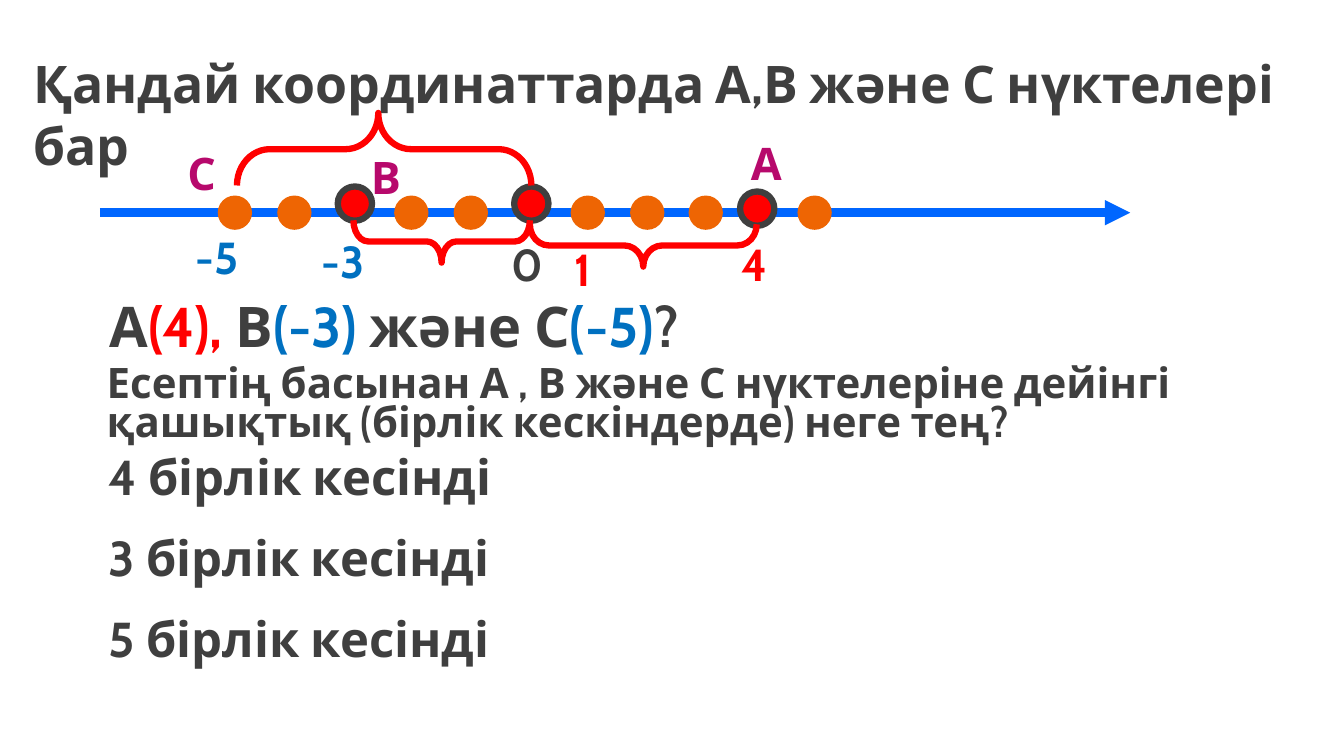
from dataclasses import dataclass

from pptx import Presentation
from pptx.dml.color import RGBColor
from pptx.enum.shapes import MSO_CONNECTOR, MSO_SHAPE
from pptx.enum.text import MSO_ANCHOR, MSO_AUTO_SIZE, PP_ALIGN
from pptx.oxml.ns import qn
from pptx.oxml.xmlchemy import OxmlElement as Element
from pptx.util import Inches, Pt


@dataclass(frozen=True)
class Theme:
    font: str = "Cabin"
    ink: str = "3F3F3F"
    red: str = "FF0000"
    blue: str = "0070C0"
    axis: str = "0066FF"
    dot: str = "EE6503"
    letter: str = "B7096C"
    title: int = 37
    coords: int = 40
    answer: int = 35
    label: int = 32
    question: int = 30
    outline: float = 4.5
    axis_width: float = 6


class NumberLineSlide:
    """Places elements on a grid of 0.1 inch columns and rows."""

    def __init__(self, prs, theme):
        self.t = theme
        self.s = prs.slides.add_slide(prs.slide_layouts[1])

    def grid(self, *cells):
        return [Inches(c / 10) for c in cells]

    def rgb(self, color):
        return RGBColor.from_string(color)

    def style(self, r, size, color):
        r.font.name, r.font.size, r.font.bold = self.t.font, Pt(size), True
        r.font.color.rgb = self.rgb(color)

    def frame(self, sp):
        tf = sp.text_frame
        tf.word_wrap = True
        tf.auto_size = MSO_AUTO_SIZE.SHAPE_TO_FIT_TEXT
        tf.vertical_anchor = MSO_ANCHOR.TOP
        return tf

    def placeholder(self, sp, box, text, size, gap=0):
        sp.left, sp.top, sp.width, sp.height = self.grid(*box)
        tf = self.frame(sp)
        tf.text = text
        for i, p in enumerate(tf.paragraphs):
            pPr = p._p.get_or_add_pPr()
            pPr.set("marL", "0")
            pPr.set("indent", "0")
            pPr.append(Element("a:buNone"))
            p.alignment = PP_ALIGN.LEFT
            p.space_before = Pt(gap if i else 0)
            self.style(p.runs[0], size, self.t.ink)

    def title(self, box, text):
        self.placeholder(self.s.shapes.title, box, text, self.t.title)

    def answers(self, box, lines):
        self.placeholder(self.s.placeholders[1], box, "\n".join(lines),
                         self.t.answer, gap=16)

    def text(self, box, parts, size, leading=None):
        p = self.frame(self.s.shapes.add_textbox(*self.grid(*box))).paragraphs[0]
        if leading:
            p.line_spacing = Pt(leading)
        for words, color in parts:
            r = p.add_run()
            r.text = words
            self.style(r, size, color)

    def label(self, x, y, words, color, width=6.7):
        self.text((x, y, width, 6.3), [(words, color)], self.t.label)

    def axis(self, x1, x2, y):
        line = self.s.shapes.add_connector(MSO_CONNECTOR.STRAIGHT,
                                           *self.grid(x1, y, x2, y))
        line.line.width = Pt(self.t.axis_width)
        line.line.color.rgb = self.rgb(self.t.axis)
        spPr = line._element.spPr
        head = Element("a:tailEnd")
        head.set("type", "triangle")
        spPr.find(qn("a:ln")).append(head)
        spPr.append(Element("a:effectLst"))

    def point(self, x, y, marked=False, size=3.4):
        sp = self.s.shapes.add_shape(
            MSO_SHAPE.OVAL, *self.grid(x - size / 2, y - size / 2, size, size))
        sp.shadow.inherit = False
        sp.fill.solid()
        sp.fill.fore_color.rgb = self.rgb(self.t.red if marked else self.t.dot)
        if marked:
            sp.line.width = Pt(self.t.outline)
            sp.line.color.rgb = self.rgb(self.t.ink)
        else:
            sp.line.fill.background()

    def brace(self, x1, x2, top, depth, rotation, curve, tip=0.5):
        span = x2 - x1
        # The upright brace turns about its centre to lie along the axis
        sp = self.s.shapes.add_shape(MSO_SHAPE.LEFT_BRACE, *self.grid(
            (x1 + x2 - depth) / 2, top + (depth - span) / 2, depth, span))
        sp.rotation = rotation
        sp.adjustments[0], sp.adjustments[1] = curve, tip
        sp.shadow.inherit = False
        sp.fill.background()
        sp.line.width = Pt(self.t.outline)
        sp.line.color.rgb = self.rgb(self.t.red)


def main():
    prs = Presentation()
    prs.slide_width, prs.slide_height = Inches(13.33), Inches(7.5)
    t = Theme()
    slide = NumberLineSlide(prs, t)

    # Heading and answers
    slide.title((2.3, 4.6, 129.4, 13.5),
                "Қандай координаттарда А,В және С нүктелері бар")
    slide.answers((9.8, 43.8, 70.3, 24.6),
                  [f"{n} бірлік кесінді" for n in (4, 3, 5)])

    # Number line with points from -5 to 5
    axis_y = 21.1
    slide.axis(9.9, 112.1, axis_y)
    columns = (23.3, 29.2, 35.2, 40.8, 46.7, 52.7, 58.3, 64.2, 70, 75.1, 80.8)
    marked = {-3: 20.2, 0: 20.2, 4: 20.7}
    for n, x in enumerate(columns, start=-5):
        slide.point(x, marked.get(n, axis_y), n in marked)

    # Point names and coordinates
    for x, y, words, color in ((73.5, 13, "А", t.letter),
                               (35.8, 14.4, "В", t.letter),
                               (17.6, 14, "С", t.letter),
                               (49.8, 23, "0", t.ink),
                               (56, 23.5, "1", t.red),
                               (72.6, 23, "4", t.red)):
        slide.label(x, y, words, color)
    for x, y, words in ((30.9, 22.7, "-3"), (18.4, 22.3, "-5")):
        slide.label(x, y, words, t.blue, width=8.3)

    # Distances from the origin to A, B and C
    slide.brace(52.55, 75.05, 22.25, 4.2, 270, 0.45)
    slide.brace(35.05, 52.55, 21.85, 4.2, 270, 0.35)
    slide.brace(23.5, 52.7, 11.2, 7.2, 90, 0.45, tip=0.52)

    # Coordinates and question
    slide.text((9.9, 28.4, 74.7, 7.7),
               [("А", t.ink), ("(4), ", t.red), ("В", t.ink), ("(-3)", t.blue),
                (" және С", t.ink), ("(-5)", t.blue), ("?", t.ink)], t.coords)
    slide.text((9.6, 36, 116.3, 8.9),
               [("Есептің басынан А , В және С нүктелеріне дейінгі "
                 "қашықтық (бірлік кескіндерде) неге тең?", t.ink)],
               t.question, leading=28)

    prs.save("out.pptx")


if __name__ == "__main__":
    main()
